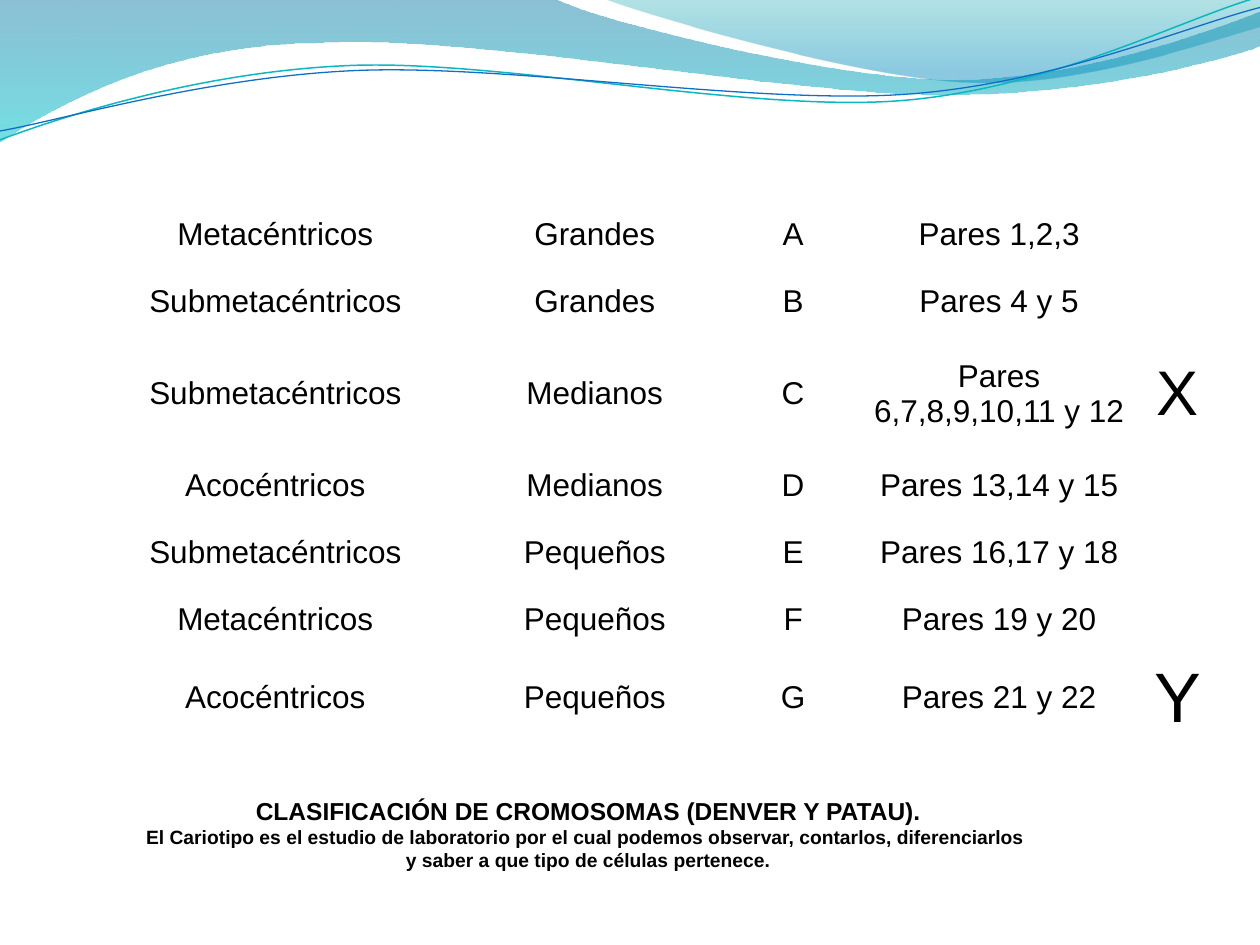
from dataclasses import dataclass
from math import cos, radians, sin

from lxml import etree
from pptx import Presentation
from pptx.dml.color import RGBColor
from pptx.enum.text import MSO_ANCHOR, MSO_AUTO_SIZE, PP_ALIGN
from pptx.oxml.ns import qn
from pptx.util import Pt

EMU_PER_PX = 9144  # 100 px to the inch
WAVE_TILT = -2.7
FONT = "Arial"
CENTER = PP_ALIGN.CENTER
MIDDLE = MSO_ANCHOR.MIDDLE
FIT_SHAPE = MSO_AUTO_SIZE.SHAPE_TO_FIT_TEXT

COLORS = {
    "text": "000000",
    "deep_blue": "0074A1",
    "cyan": "00C6CF",
    "teal": "00A1A9",
    "sky": "008BBF",
    "teal_line": "0AB8BF",
    "blue_line": "0F6FC6",
}

Point = tuple[float, float]
Segments = list[list[Point]]


@dataclass(frozen=True)
class Stop:
    position: float
    color: str
    opacity: int


@dataclass(frozen=True)
class Band:
    """Each segment holds one point (a line) or three (a Bézier curve)."""
    start: Point
    segments: Segments
    stops: tuple[Stop, Stop]


@dataclass(frozen=True)
class Wave:
    start: Point
    segments: Segments
    pivot: Point
    color: str
    width: float


@dataclass(frozen=True)
class Line:
    text: str
    size: int


BANDS = [
    Band((0, -1), [
        [(440, -1)],
        [(476, 17), (664, 63), (758, 63)],
        [(853, 63), (958, 26), (1000, 9)],
        [(1001, 36)],
        [(983, 44), (870, 76), (746, 75)],
        [(622, 75), (382, 28), (257, 34)],
        [(129, 35), (46, 83), (-1, 113)],
        [(0, -1)],
    ], (Stop(0, "deep_blue", 45), Stop(1, "cyan", 55))),
    Band((479, -1), [
        [(509, 11), (682, 62), (769, 65)],
        [(856, 69), (961, 32), (1000, 21)],
        [(1000, 0)],
        [(479, -1)],
    ], (Stop(0, "teal", 30), Stop(0.8, "sky", 45))),
]

WAVES = [
    Wave((0, 111), [
        [(48, 93), (158, 57), (277, 52)],
        [(395, 47), (593, 89), (713, 80)],
        [(833, 71), (938, 15), (998, -2)],
    ], (499, 57), "teal_line", 0.85),
    Wave((0, 104), [
        [(47, 96), (164, 61), (283, 56)],
        [(403, 51), (597, 83), (717, 75)],
        [(836, 67), (941, 21), (1000, 6)],
    ], (500, 59), "blue_line", 0.75),
]

TABLE_HEIGHT = 435
COLUMN_WIDTHS = [293, 214, 101, 226, 57]
ROW_HEIGHTS = [53, 53, 93, 53, 53, 53, 53]
CHROMOSOME_GROUPS = [
    ("Metacéntricos", "Grandes", "A", "Pares 1,2,3", ""),
    ("Submetacéntricos", "Grandes", "B", "Pares 4 y 5", ""),
    ("Submetacéntricos", "Medianos", "C", "Pares 6,7,8,9,10,11 y 12", "X"),
    ("Acocéntricos", "Medianos", "D", "Pares 13,14 y 15", ""),
    ("Submetacéntricos", "Pequeños", "E", "Pares 16,17 y 18", ""),
    ("Metacéntricos", "Pequeños", "F", "Pares 19 y 20", ""),
    ("Acocéntricos", "Pequeños", "G", "Pares 21 y 22", "Y"),
]
SEX_CHROMOSOME_SIZES = {"X": 36, "Y": 40}

CAPTION = [
    Line("CLASIFICACIÓN DE CROMOSOMAS (DENVER Y PATAU).", 14),
    Line("El Cariotipo es el estudio de laboratorio por el cual podemos "
         "observar, contarlos, diferenciarlos ", 11),
    Line("y saber a que tipo de células pertenece.", 11),
]


def px(length: float) -> int:
    return round(length * EMU_PER_PX)


def rgb(name: str) -> RGBColor:
    return RGBColor.from_string(COLORS[name])


def level(point: Point, pivot: Point) -> Point:
    """Undo the wave tilt, which the rotation of the shape puts back."""
    angle = radians(-WAVE_TILT)
    x, y = point[0] - pivot[0], point[1] - pivot[1]
    return (pivot[0] + x * cos(angle) - y * sin(angle),
            pivot[1] + x * sin(angle) + y * cos(angle))


def add_outline(page, start: Point, segments: Segments, closed: bool):
    """Draw through all points, then join each triple into a Bézier curve."""
    points = [(px(x), px(y)) for x, y in [start, *sum(segments, [])]]
    builder = page.shapes.build_freeform(*points[0], scale=1.0)
    builder.add_line_segments(points[1:], close=closed)
    shape = builder.convert_to_shape()
    shape.shadow.inherit = False
    steps = iter(list(shape.element.spPr.iter(qn("a:lnTo"))))
    for segment in segments:
        parts = [next(steps) for _ in segment]
        if len(parts) == 3:
            curve = etree.Element(qn("a:cubicBezTo"))
            parts[0].addprevious(curve)
            for part in parts:
                curve.append(part[0])
                part.getparent().remove(part)
    return shape


def add_band(page, band: Band) -> None:
    shape = add_outline(page, band.start, band.segments, closed=True)
    shape.line.fill.background()
    shape.fill.gradient()
    shape.fill.gradient_angle = 270
    for target, stop in zip(shape.fill.gradient_stops, band.stops):
        target.position = stop.position
        target.color.rgb = rgb(stop.color)
    colors = list(shape.element.spPr.iter(qn("a:srgbClr")))
    for color, stop in zip(colors, band.stops):
        etree.SubElement(color, qn("a:alpha")).set("val", str(stop.opacity * 1000))


def add_wave(page, wave: Wave) -> None:
    segments = [[level(point, wave.pivot) for point in segment]
                for segment in wave.segments]
    shape = add_outline(page, level(wave.start, wave.pivot), segments, closed=False)
    shape.rotation = WAVE_TILT
    shape.fill.background()
    shape.line.color.rgb = rgb(wave.color)
    shape.line.width = Pt(wave.width)


def write(para, text: str, size: int, bold: bool = False) -> None:
    para.alignment = CENTER
    span = para.add_run()
    span.text = text
    span.font.name = FONT
    span.font.size = Pt(size)
    span.font.bold = bold
    span.font.color.rgb = rgb("text")


def add_group_table(page) -> None:
    frame = page.shapes.add_table(
        len(ROW_HEIGHTS), len(COLUMN_WIDTHS), px(72), px(160),
        px(sum(COLUMN_WIDTHS)), px(TABLE_HEIGHT))
    table = frame.table
    table.first_row = table.horz_banding = False
    for column, width in zip(table.columns, COLUMN_WIDTHS):
        column.width = px(width)
    for row, height, texts in zip(table.rows, ROW_HEIGHTS, CHROMOSOME_GROUPS):
        row.height = px(height)
        for cell, text in zip(row.cells, texts):
            cell.fill.background()
            cell.vertical_anchor = MIDDLE
            if text:
                size = SEX_CHROMOSOME_SIZES.get(text, 18)
                write(cell.text_frame.paragraphs[0], text, size)
    frame.height = px(TABLE_HEIGHT)  # the last row grows to hold its letter


def add_caption(page) -> None:
    box = page.shapes.add_textbox(px(104), px(626), px(726), px(71))
    frame = box.text_frame
    frame.word_wrap = False
    frame.auto_size = FIT_SHAPE
    frame.vertical_anchor = MIDDLE
    for index, line in enumerate(CAPTION):
        para = frame.add_paragraph() if index else frame.paragraphs[0]
        write(para, line.text, line.size, bold=True)


def main() -> None:
    deck = Presentation()
    deck.slide_width, deck.slide_height = px(1000), px(750)
    page = deck.slides.add_slide(deck.slide_layouts[6])
    for band in BANDS:
        add_band(page, band)
    for wave in WAVES:
        add_wave(page, wave)
    add_group_table(page)
    add_caption(page)
    deck.save("out.pptx")


if __name__ == "__main__":
    main()
